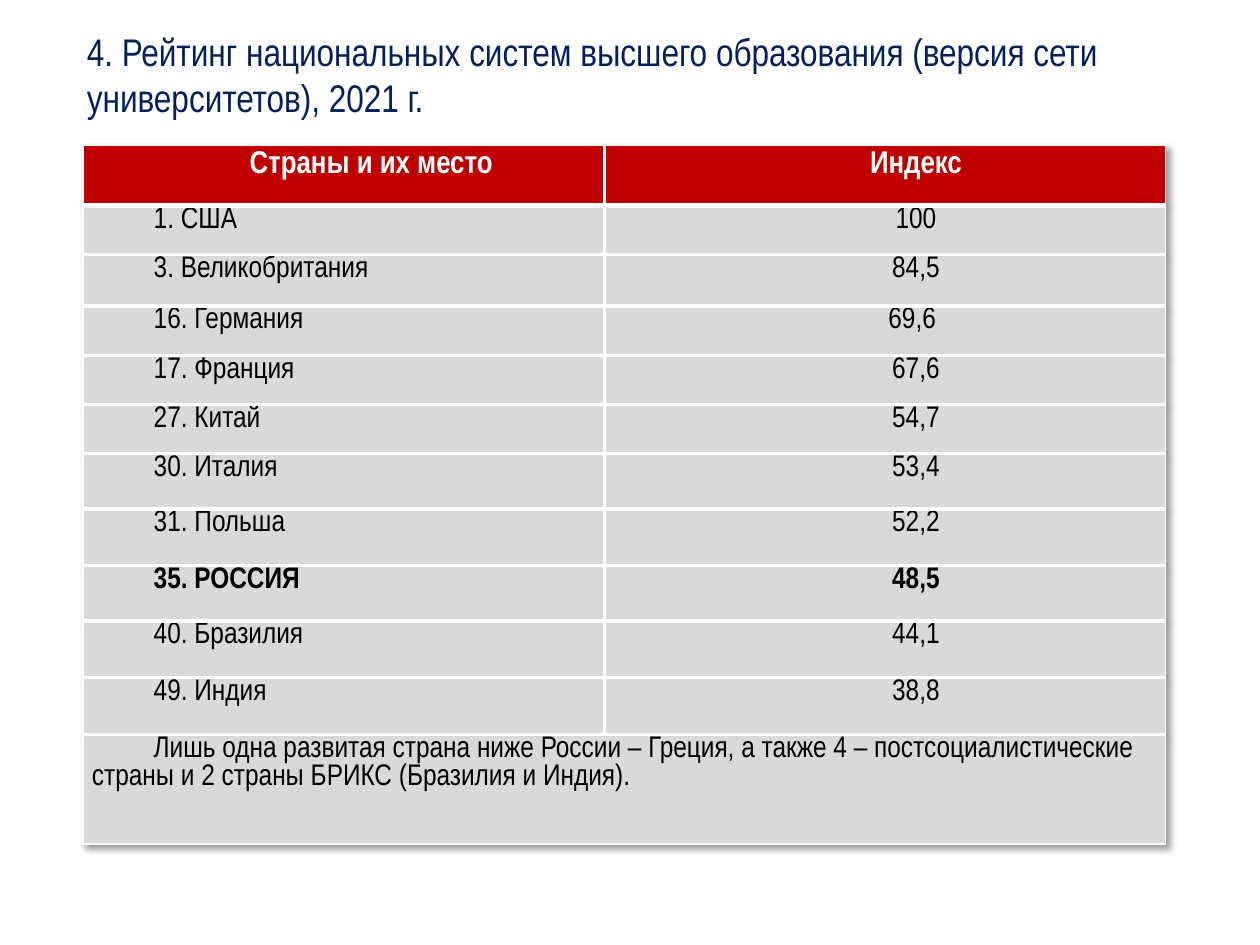
from lxml import etree
from pptx import Presentation
from pptx.dml.color import RGBColor
from pptx.enum import text
from pptx.oxml import ns
from pptx.util import Inches, Pt

COLORS = {
    "title": "002060",
    "header": "C00000",
    "body": "D9D9D9",
    "white": "FFFFFF",
    "black": "000000",
}
FONT = "Arial Narrow"
INDENT = 0.49
HEADINGS = ("Страны и их место ", "Индекс")
COUNTRIES = [
    ("1. США", "100"),
    ("3. Великобритания", "84,5"),
    ("16. Германия", "69,6"),
    ("17. Франция", "67,6"),
    ("27. Китай", "54,7"),
    ("30. Италия", "53,4"),
    ("31. Польша", "52,2"),
    ("35. РОССИЯ", "48,5"),
    ("40. Бразилия", "44,1"),
    ("49. Индия", "38,8"),
]
NOTE = (
    "Лишь одна развитая страна ниже России – Греция, а также 4 – "
    "постсоциалистические страны и 2 страны БРИКС (Бразилия и Индия)."
)
COLUMN_WIDTHS = (4.14, 4.45)
ROW_HEIGHTS = [0.48, 0.39, 0.41] + [0.39] * 3 + [0.44, 0.45] * 2 + [0.45, 0.87]


def rgb(name):
    return RGBColor.from_string(COLORS[name])


def write_text(frame, content, size=17, color="black", bold=False,
               align=text.PP_ALIGN.LEFT, indent=0, spacing=1.0):
    paragraph = frame.paragraphs[0]
    paragraph.alignment = align
    paragraph.line_spacing = spacing
    properties = paragraph._p.get_or_add_pPr()
    properties.set("marL", "0")
    properties.set("indent", str(Inches(indent)))
    run = paragraph.add_run()
    run.text = content
    run.font.name = FONT
    run.font.size = Pt(size)
    run.font.bold = bold
    run.font.color.rgb = rgb(color)


def add_child(parent, tag, **attributes):
    return etree.SubElement(parent, ns.qn(tag), attributes)


def set_borders(cell, **widths):
    """Draw white cell borders; widths are points keyed by L, R, T and B."""
    properties = cell._tc.get_or_add_tcPr()
    for position, (side, width) in enumerate(widths.items()):
        line = etree.Element(ns.qn(f"a:ln{side}"), {"w": str(Pt(width))})
        fill = add_child(line, "a:solidFill")
        add_child(fill, "a:srgbClr", val=COLORS["white"])
        properties.insert(position, line)


def format_cell(cell, content, fill="body", **text_format):
    cell.margin_left = cell.margin_right = Inches(0.07)
    cell.margin_top = Inches(0.01)
    cell.margin_bottom = 0
    cell.fill.solid()
    cell.fill.fore_color.rgb = rgb(fill)
    write_text(cell.text_frame, content, indent=text_format.pop("indent", INDENT),
               **text_format)


def add_table_shadow(table):
    effects = add_child(table._tbl.tblPr, "a:effectLst")
    table._tbl.tblPr.insert(0, effects)
    shadow = add_child(effects, "a:outerShdw", blurRad=str(Pt(4)),
                       dist=str(Pt(3)), dir="2700000", algn="tl",
                       rotWithShape="0")
    color = add_child(shadow, "a:srgbClr", val=COLORS["black"])
    add_child(color, "a:alpha", val="40000")


def add_title(slide):
    title = slide.shapes.title
    title.left, title.top = Inches(0.59), Inches(0.17)
    title.width, title.height = Inches(9.03), Inches(0.84)
    frame = title.text_frame
    frame.word_wrap = True
    frame.auto_size = text.MSO_AUTO_SIZE.NONE
    frame.vertical_anchor = text.MSO_ANCHOR.MIDDLE
    write_text(frame, "4. Рейтинг национальных систем высшего образования "
               "(версия сети университетов), 2021 г.", size=22, color="title")


def add_ranking(slide):
    table = slide.shapes.add_table(
        len(ROW_HEIGHTS), len(COLUMN_WIDTHS), Inches(0.66), Inches(1.15),
        Inches(sum(COLUMN_WIDTHS)), Inches(sum(ROW_HEIGHTS))).table
    for column, width in zip(table.columns, COLUMN_WIDTHS):
        column.width = Inches(width)
    for row, height in zip(table.rows, ROW_HEIGHTS):
        row.height = Inches(height)
    add_table_shadow(table)

    center = text.PP_ALIGN.CENTER
    for column, heading in enumerate(HEADINGS):
        format_cell(table.cell(0, column), heading, fill="header", size=18,
                    color="white", bold=True, align=center, spacing=1.15)
    for row, (country, index) in enumerate(COUNTRIES, start=1):
        bold = "РОССИЯ" in country
        format_cell(table.cell(row, 0), country, bold=bold)
        format_cell(table.cell(row, 1), index, bold=bold, align=center,
                    indent=0.43 if "Германия" in country else INDENT)
    last = len(ROW_HEIGHTS) - 1
    note = table.cell(last, 0)
    note.merge(table.cell(last, 1))
    format_cell(note, NOTE)

    for row in range(last):
        top = 1 if row < 2 else 2.25
        bottom = 3 if row == 0 else 2.25
        set_borders(table.cell(row, 0), L=1, R=2.25, T=top, B=bottom)
        set_borders(table.cell(row, 1), L=2.25, R=1, T=top, B=bottom)
    set_borders(note, L=1, R=1, T=2.25, B=1)


def main():
    presentation = Presentation()
    presentation.slide_width = Inches(10)
    presentation.slide_height = Inches(7.5)
    slide = presentation.slides.add_slide(presentation.slide_layouts[5])
    add_title(slide)
    add_ranking(slide)
    presentation.save("out.pptx")


if __name__ == "__main__":
    main()
